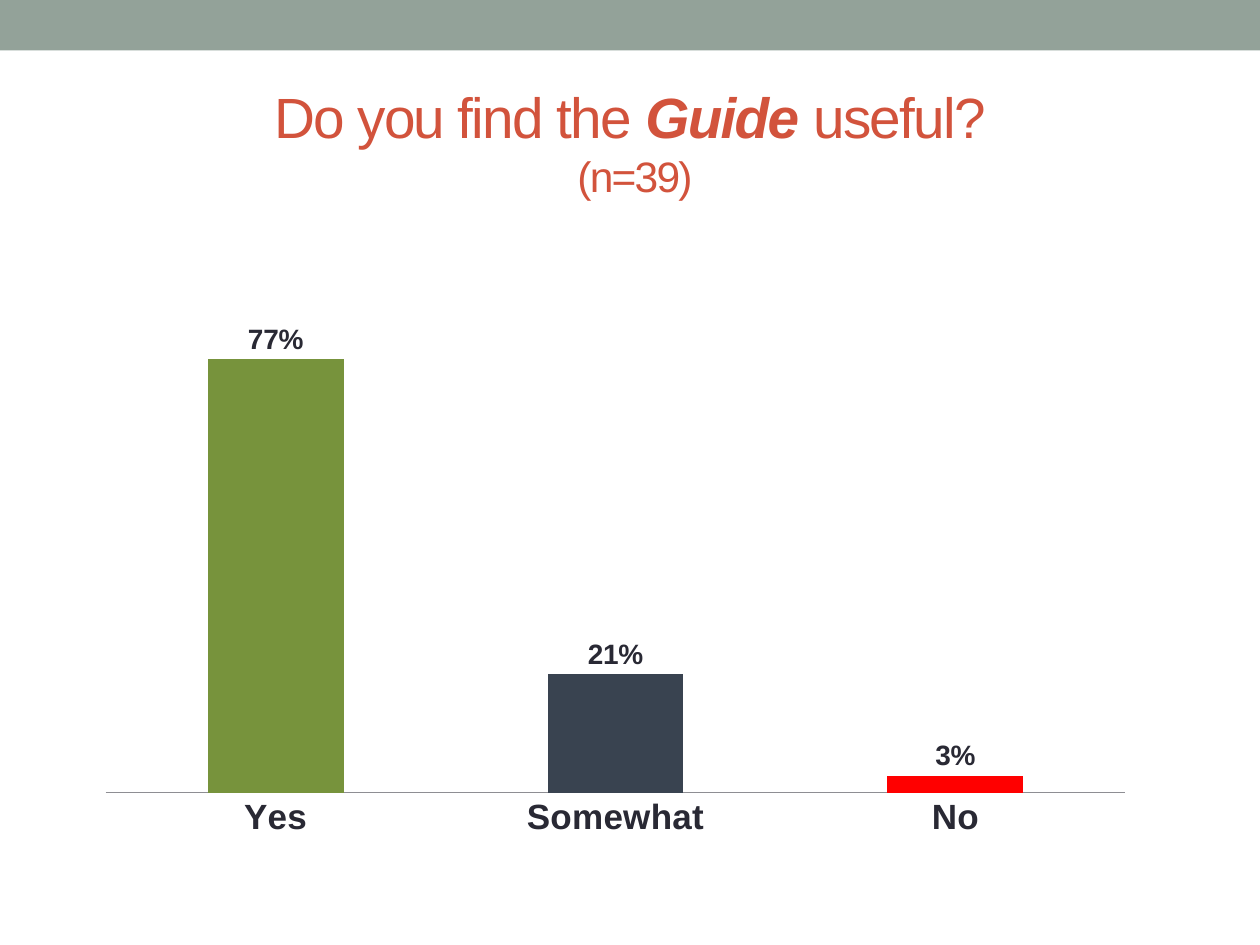
from lxml import etree
from pptx import Presentation
from pptx.chart.data import CategoryChartData
from pptx.dml.color import RGBColor
from pptx.enum import chart as ch, shapes, text
from pptx.oxml import parse_xml
from pptx.oxml.ns import nsdecls
from pptx.util import Inches, Pt

# Content
FONT, INK, ACCENT, BAND, AXIS = "Arial", "292934", "D2533C", "93A299", "8E8E93"
TITLE = [("Do you find the ", False), ("Guide", True), (" useful?", False)]
SAMPLE = " (n=39)"
ANSWERS = [("Yes", 0.77, "77933C"), ("Somewhat", 0.21, "394350"), ("No", 0.03, "FF0000")]
PLOT = {"x": 0.02, "y": 0.02, "w": 0.96, "h": 0.88}  # shares of the chart frame


def rgb(value):
    return RGBColor.from_string(value)


def paint(fill, color):
    fill.solid()
    fill.fore_color.rgb = rgb(color)


def style(font, size, color, bold=None):
    font.name, font.size, font.bold = FONT, Pt(size), bold
    font.color.rgb = rgb(color)


def add_run(p, words, size, strong=False):
    r = p.add_run()
    r.text = words
    style(r.font, size, ACCENT, strong)
    r.font.italic = strong
    r.font._element.set("spc", "-100")


prs = Presentation()
prs.slide_width, prs.slide_height = Inches(10), Inches(7.5)
s = prs.slides.add_slide(prs.slide_layouts[5])

# Top band
band = s.shapes.add_shape(shapes.MSO_SHAPE.RECTANGLE, 0, 0, prs.slide_width, Inches(0.4))
band.shadow.inherit = False
paint(band.fill, BAND)
band.line.fill.background()

# Title with sample size
title = s.shapes.title
title.left, title.top, title.width, title.height = map(Inches, (0.5, 0.58, 9, 1.08))
tf = title.text_frame
tf.word_wrap = True
tf.auto_size = text.MSO_AUTO_SIZE.NONE
tf.vertical_anchor = text.MSO_ANCHOR.MIDDLE
p = tf.paragraphs[0]
p.alignment = text.PP_ALIGN.CENTER
for words, strong in TITLE:
    add_run(p, words, 32.4, strong)
p.add_line_break()
add_run(p, SAMPLE, 24.3)

# Column chart
data = CategoryChartData(number_format="0%")
data.categories = [name for name, _, _ in ANSWERS]
data.add_series("Series 1", [share for _, share, _ in ANSWERS])
chart = s.shapes.add_chart(ch.XL_CHART_TYPE.COLUMN_CLUSTERED, Inches(0.67), Inches(2.18),
                           Inches(8.43), Inches(4.57), data).chart
chart.has_title = chart.has_legend = False
style(chart.font, 10, INK)

plot = chart.plots[0]
plot.gap_width, plot.overlap, plot.vary_by_categories = 150, -25, False
series = plot.series[0]
paint(series.format.fill, BAND)
series.invert_if_negative = False
for i, (_, _, color) in enumerate(ANSWERS):
    paint(series.points[i].format.fill, color)

labels = series.data_labels
labels.show_value = True
labels.number_format, labels.number_format_is_linked = "0%", False
labels.position = ch.XL_LABEL_POSITION.OUTSIDE_END
style(labels.font, 16, INK, True)

# Axes
cat, val = chart.category_axis, chart.value_axis
cat.major_tick_mark = cat.minor_tick_mark = ch.XL_TICK_MARK.NONE
cat.format.line.color.rgb = rgb(AXIS)
cat.format.line.width = Pt(0.75)
style(cat.tick_labels.font, 20, INK, True)
val.minimum_scale, val.maximum_scale = 0, 0.9
val.has_major_gridlines = val.visible = False

# Fixed inner plot area
area = chart._chartSpace.chart.plotArea
for old in area.findall("{*}layout"):
    area.remove(old)
layout = parse_xml(f"<c:layout {nsdecls('c')}><c:manualLayout/></c:layout>")
settings = [("layoutTarget", "inner"), ("xMode", "edge"), ("yMode", "edge"), *PLOT.items()]
for tag, value in settings:
    etree.SubElement(layout[0], f"{{{layout.nsmap['c']}}}{tag}").set("val", str(value))
area.insert(0, layout)

prs.save("out.pptx")
